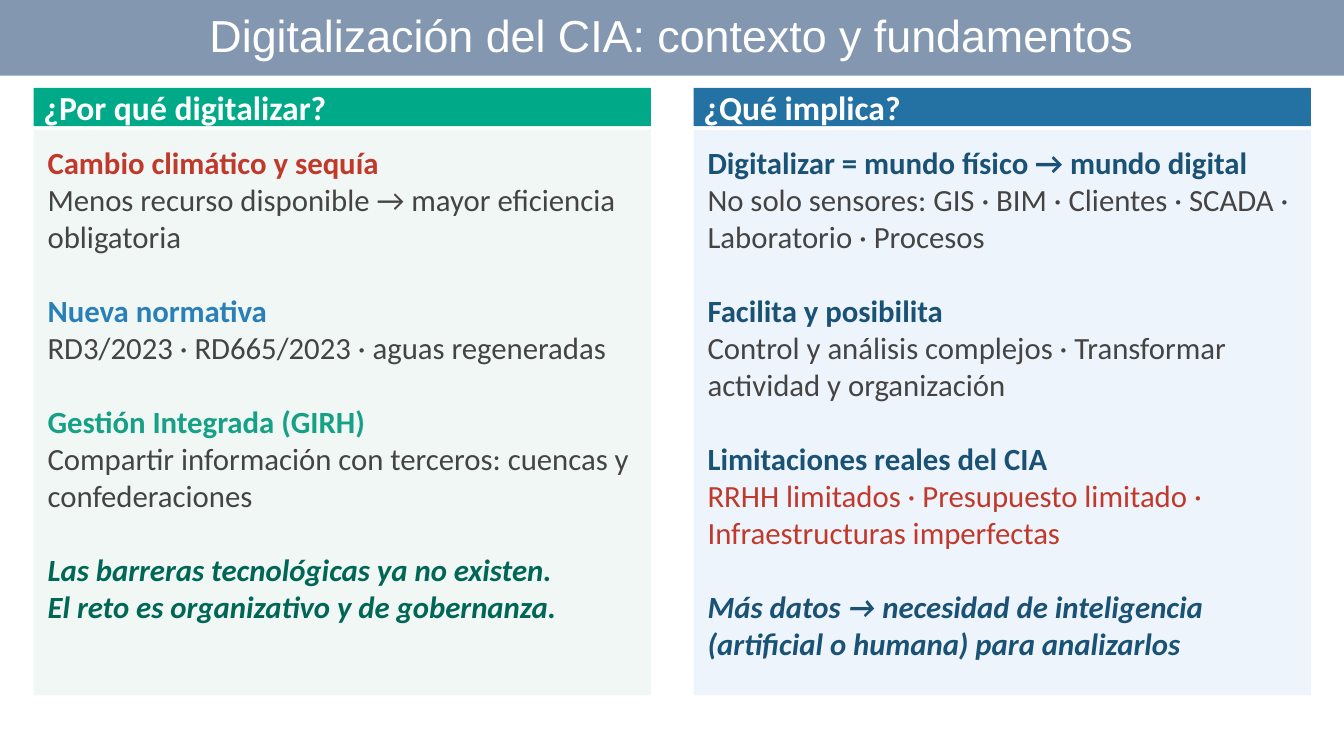
"""Build the slide on the context and foundations of digitalisation."""
from pptx import Presentation
from pptx.dml.color import RGBColor
from pptx.enum.shapes import MSO_SHAPE as Shape
from pptx.enum.text import MSO_ANCHOR as Anchor, PP_ALIGN as Align
from pptx.util import Pt


def color(value):
    return RGBColor.from_string(value)


def add_box(paragraphs, left, top, width, height, fill, size, font="Calibri",
            align=Align.LEFT, anchor=Anchor.MIDDLE, inset=None, spacing=None):
    box = slide.shapes.add_shape(Shape.RECTANGLE, Pt(left), Pt(top), Pt(width), Pt(height))
    box.shadow.inherit = False
    box.fill.solid()
    box.fill.fore_color.rgb = color(fill)
    box.line.fill.background()
    frame = box.text_frame
    frame.word_wrap = True
    frame.vertical_anchor = anchor
    if inset is not None:
        frame.margin_left = frame.margin_right = Pt(inset)
        frame.margin_top = frame.margin_bottom = Pt(inset)
    for index, (text, ink, bold, italic, gap) in enumerate(paragraphs):
        para = frame.paragraphs[0] if index == 0 else frame.add_paragraph()
        para.alignment = align
        if spacing:
            para.line_spacing = spacing
        if gap:
            para.space_before = Pt(gap)
        span = para.add_run()
        span.text = text
        span.font.name = font
        span.font.size = Pt(size)
        span.font.bold = bold
        span.font.italic = italic
        span.font.color.rgb = color(ink)


WHITE, GRAY, RED, NAVY = "FFFFFF", "444444", "C0392B", "1A5276"
COLUMN_LEFT, COLUMN_STEP, COLUMN_WIDTH = 24, 471.4, 441
BLANK_LINE = 26.4

columns = [
    ("¿Por qué digitalizar?", "00AA88", "F0F7F5", [
        ("Cambio climático y sequía", RED,
         "Menos recurso disponible → mayor eficiencia obligatoria", GRAY),
        ("Nueva normativa", "2980B9",
         "RD3/2023 · RD665/2023 · aguas regeneradas", GRAY),
        ("Gestión Integrada (GIRH)", "16A085",
         "Compartir información con terceros: cuencas y confederaciones", GRAY),
    ], "006655", ["Las barreras tecnológicas ya no existen.",
                  "El reto es organizativo y de gobernanza."]),
    ("¿Qué implica?", "2471A3", "EEF4FB", [
        ("Digitalizar = mundo físico → mundo digital", NAVY,
         "No solo sensores: GIS · BIM · Clientes · SCADA · Laboratorio · Procesos", GRAY),
        ("Facilita y posibilita", NAVY,
         "Control y análisis complejos · Transformar actividad y organización", GRAY),
        ("Limitaciones reales del CIA", NAVY,
         "RRHH limitados · Presupuesto limitado · Infraestructuras imperfectas", RED),
    ], NAVY, ["Más datos → necesidad de inteligencia",
              "(artificial o humana) para analizarlos"]),
]

deck = Presentation()
deck.slide_width, deck.slide_height = Pt(960), Pt(540)
slide = deck.slides.add_slide(deck.slide_layouts[6])

title = "Digitalización del CIA: contexto y fundamentos"
add_box([(title, WHITE, False, False, 0)], 0, 0, 960, 54, "8497B0", 32,
        font="Arial", align=Align.CENTER, spacing=0.9)

for number, (header, header_fill, body_fill, topics, closing_ink, closing) in enumerate(columns):
    left = COLUMN_LEFT + number * COLUMN_STEP
    add_box([(header, WHITE, True, False, 0)], left, 62.8, COLUMN_WIDTH, 27.4, header_fill, 24)
    body = []
    for heading, heading_ink, detail, detail_ink in topics:
        body.append((heading, heading_ink, True, False, BLANK_LINE if body else 0))
        body.append((detail, detail_ink, False, False, 0))
    for line, text in enumerate(closing):
        body.append((text, closing_ink, True, True, 0 if line else BLANK_LINE))
    add_box(body, left, 92.8, COLUMN_WIDTH, 404, body_fill, 22, anchor=Anchor.TOP, inset=10)

deck.save("out.pptx")
